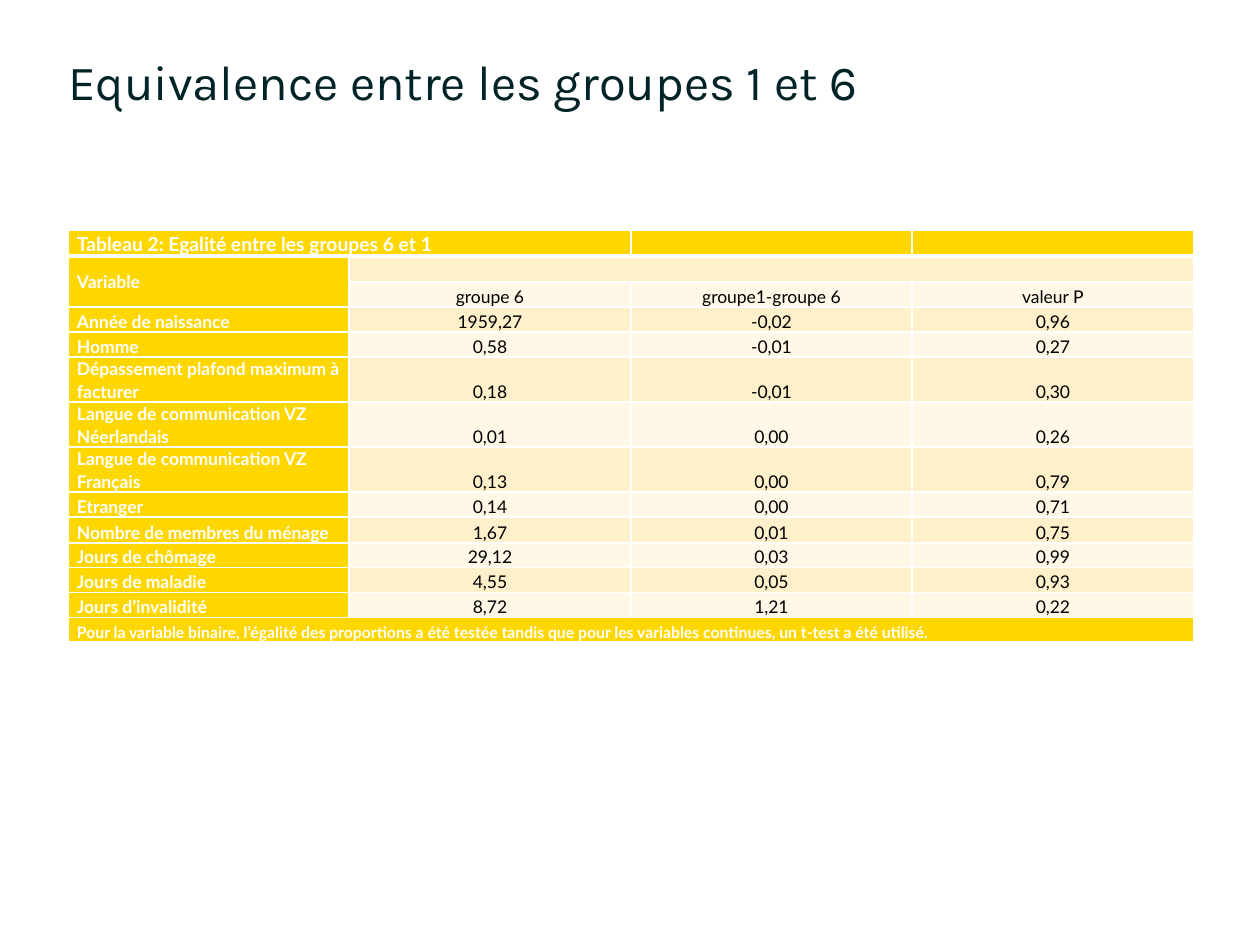
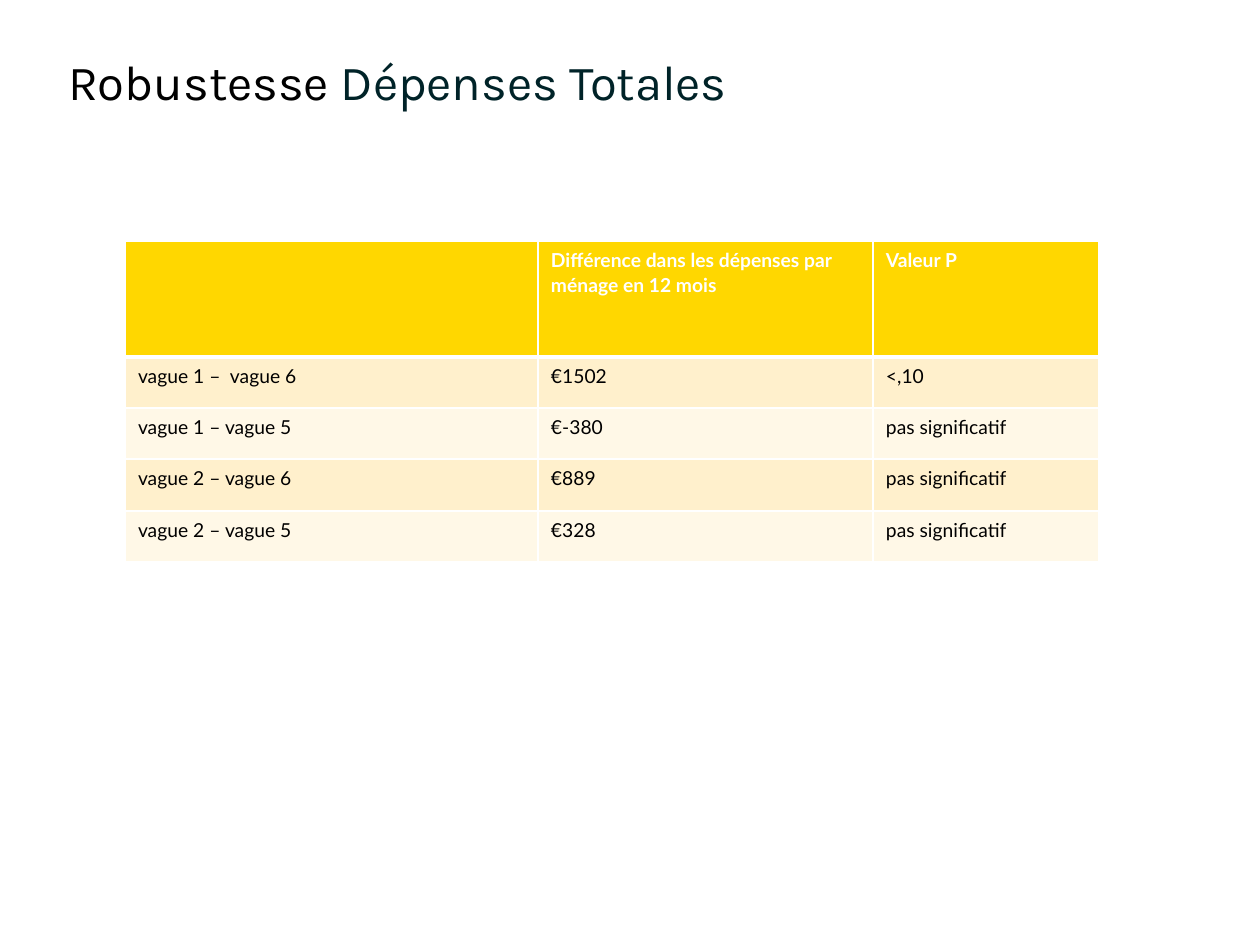
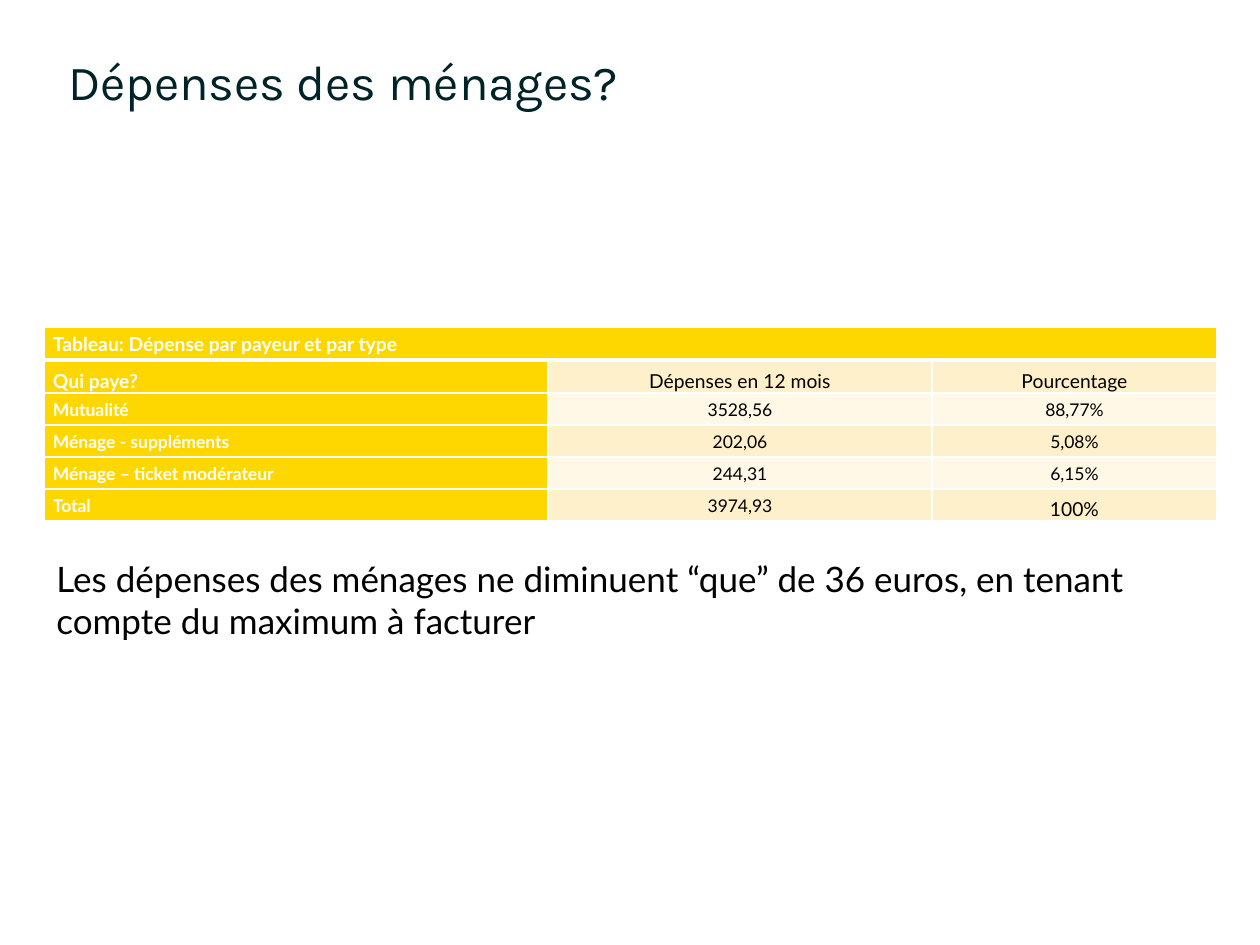
"""Build three slides of result tables with a shared title and table style."""
from dataclasses import dataclass

from lxml import etree
from pptx import Presentation
from pptx import util as u
from pptx.dml import color
from pptx.enum import text
from pptx.oxml import ns

Anchor, Align = text.MSO_ANCHOR, text.PP_ALIGN


@dataclass(frozen=True)
class Theme:
    """Hold the colours, fonts and type sizes."""
    ink: str = "000000"
    deep: str = "002328"
    white: str = "FFFFFF"
    gold: str = "FFD700"
    bands: tuple = ("FFF8E7", "FFF0CC")
    head: str = "Karla"
    body: str = "Lato"
    title: int = 28
    lead: int = 32
    note: int = 20
    big: int = 11
    mid: int = 10
    small: int = 9


T = Theme()
TITLE = (68, 54, 1126, 115)
TIGHT = dict(margin_left=9, margin_right=9, margin_top=0, margin_bottom=0)


def px(num):
    """Turn pixels into EMU."""
    return u.Emu(round(num * 914400 / 126))


def put(item, vals):
    """Set each named value on an item."""
    for name, val in vals.items():
        setattr(item, name, val)


def pad(item, gaps):
    """Set margins given in pixels."""
    put(item, {name: px(gap) for name, gap in gaps.items()})


def write(para, words, face, size, tint, bold=False):
    """Add one formatted run to a paragraph."""
    run = para.add_run()
    run.text = words
    put(run.font, dict(name=face, size=u.Pt(size), bold=bold))
    run.font.color.rgb = color.RGBColor.from_string(tint)


def edge(cell, base):
    """Draw white borders around a cell, with the given base width."""
    props = cell._tc.get_or_add_tcPr()
    widths = dict(L=1, R=1, T=1, B=base)
    for spot, (side, width) in enumerate(widths.items()):
        line = etree.Element(ns.qn(f"a:ln{side}"), w=str(u.Pt(width)))
        fill = etree.SubElement(line, ns.qn("a:solidFill"))
        etree.SubElement(fill, ns.qn("a:srgbClr"), val=T.white)
        props.insert(spot, line)


def dress(cell, words, fill, size, anchor, align, after, gaps):
    """Fill a cell and set its text."""
    cell.fill.solid()
    cell.fill.fore_color.rgb = color.RGBColor.from_string(fill)
    cell.vertical_anchor = anchor
    pad(cell, gaps)
    para = cell.text_frame.paragraphs[0]
    put(para, dict(alignment=align, line_spacing=1.07, space_after=u.Pt(after)))
    gold = fill == T.gold
    if words:
        write(para, words, T.body, size, T.white if gold else T.ink, gold)
    else:
        para._p.get_or_add_endParaRPr().set("sz", str(size * 100))


def grid(slide, box, cols, highs, rows, spans=(), key=True, last=False,
         size=T.mid, anchor=Anchor.BOTTOM, align=Align.CENTER, after=0,
         gaps=TIGHT, odd=None):
    """Place a banded table; odd maps a cell to its own size and anchor."""
    left, top = box
    frame = slide.shapes.add_table(len(highs), len(cols), px(left), px(top),
                                   px(sum(cols)), px(sum(highs)))
    table = frame.table
    put(table, dict(first_row=False, horz_banding=False))
    for col, wide in zip(table.columns, cols):
        col.width = px(wide)
    for row, high in zip(table.rows, highs):
        row.height = px(high)
    for r, row in enumerate(rows):
        for c in range(len(cols)):
            cell = table.cell(r, c)
            gold = r == 0 or (key and c == 0) or (last and r == len(rows) - 1)
            look = dict(size=T.big if r == 0 else size, anchor=anchor)
            look.update((odd or {}).get((r, c), {}))
            dress(cell, row[c] if c < len(row) else "",
                  T.gold if gold else T.bands[r % 2],
                  align=Align.LEFT if c == 0 else align,
                  after=after, gaps=gaps, **look)
            edge(cell, 3 if r == 0 else 1)
    for start, end in spans:
        table.cell(*start).merge(table.cell(*end))


def page(deck, *parts):
    """Add a slide whose title is made of words and tints."""
    slide = deck.slides.add_slide(deck.slide_layouts[5])
    title = slide.shapes.title
    put(title, dict(zip(("left", "top", "width", "height"), map(px, TITLE))))
    frame = title.text_frame
    put(frame, dict(auto_size=text.MSO_AUTO_SIZE.NONE, word_wrap=True,
                    vertical_anchor=Anchor.TOP))
    pad(frame, dict.fromkeys(TIGHT, 0))
    para = frame.paragraphs[0]
    put(para, dict(alignment=Align.LEFT, line_spacing=u.Pt(T.lead)))
    for words, tint in parts:
        write(para, words, T.head, T.title, tint)
    return slide


def note(slide, box, words):
    """Place a wrapped text box."""
    frame = slide.shapes.add_textbox(*map(px, box)).text_frame
    frame.word_wrap = True
    write(frame.paragraphs[0], words, T.body, T.note, T.ink)


def equal(deck):
    """Build the slide on how equal the groups are."""
    slide = page(deck, ("Equivalence entre les groupes 1 et 6", T.deep))
    rows = [
        ["Tableau 2: Egalité entre les groupes 6 et 1"],
        ["Variable"],
        ["", "groupe 6", "groupe1-groupe 6", "valeur P"],
        ["Année de naissance", "1959,27", "-0,02", "0,96"],
        ["Homme", "0,58", "-0,01", "0,27"],
        ["Dépassement plafond maximum à facturer", "0,18", "-0,01", "0,30"],
        ["Langue de communication VZ Néerlandais", "0,01", "0,00", "0,26"],
        ["Langue de communication VZ Français", "0,13", "0,00", "0,79"],
        ["Etranger", "0,14", "0,00", "0,71"],
        ["Nombre de membres du ménage", "1,67", "0,01", "0,75"],
        ["Jours de chômage", "29,12", "0,03", "0,99"],
        ["Jours de maladie", "4,55", "0,05", "0,93"],
        ["Jours d’invalidité", "8,72", "1,21", "0,22"],
        ["Pour la variable binaire, l’égalité des proportions a été testée "
         "tandis que pour les variables continues, un t-test a été utilisé."],
    ]
    grid(slide, (68, 230), [281, 282, 281, 282],
         [26] * 2 + [25] * 3 + [45] * 3 + [25, 26] + [25] * 3 + [24], rows,
         last=True,
         spans=[((0, 0), (0, 1)), ((1, 0), (2, 0)), ((1, 1), (1, 3)),
                ((13, 0), (13, 3))],
         odd={(1, 0): dict(anchor=Anchor.MIDDLE), (13, 0): dict(size=T.small)})


def robust(deck):
    """Build the slide on total spending."""
    slide = page(deck, ("Robustesse ", T.ink), ("Dépenses Totales", T.deep))
    rows = [
        ["", "Différence dans les dépenses par ménage en 12 mois", "Valeur P"],
        ["vague 1 –  vague 6", "€1502", "<,10"],
        ["vague 1 – vague 5", "€-380", "pas significatif"],
        ["vague 2 – vague 6", "€889", "pas significatif"],
        ["vague 2 – vague 5", "€328", "pas significatif"],
    ]
    grid(slide, (125, 241), [413, 335, 226], [116, 51, 51, 52, 51], rows,
         key=False, size=T.big, anchor=Anchor.TOP, align=Align.LEFT, after=8,
         gaps=dict(margin_left=13, margin_right=13, margin_top=6,
                   margin_bottom=6))


def homes(deck):
    """Build the slide on household spending."""
    slide = page(deck, ("Dépenses des ménages?", T.deep))
    rows = [
        ["Tableau: Dépense par payeur et par type"],
        ["Qui paye?", "Dépenses en 12 mois", "Pourcentage"],
        ["Mutualité", "3528,56", "88,77%"],
        ["Ménage - suppléments", "202,06", "5,08%"],
        ["Ménage – ticket modérateur", "244,31", "6,15%"],
        ["Total", "3974,93", "100%"],
    ]
    low = dict(size=T.big, anchor=Anchor.BOTTOM)
    grid(slide, (44, 327), [504, 384, 285], [33] * 2 + [32] * 4, rows,
         spans=[((0, 0), (0, 2))], anchor=Anchor.MIDDLE,
         odd=dict.fromkeys([(1, 0), (1, 1), (1, 2), (5, 2)], low))
    note(slide, (44, 551, 1105, 97),
         "Les dépenses des ménages ne diminuent “que” de 36 euros, en tenant "
         "compte du maximum à facturer")


def main():
    """Build and save the deck."""
    deck = Presentation()
    put(deck, dict(slide_width=px(1260), slide_height=px(945)))
    for build in (equal, robust, homes):
        build(deck)
    deck.save("out.pptx")


if __name__ == "__main__":
    main()
